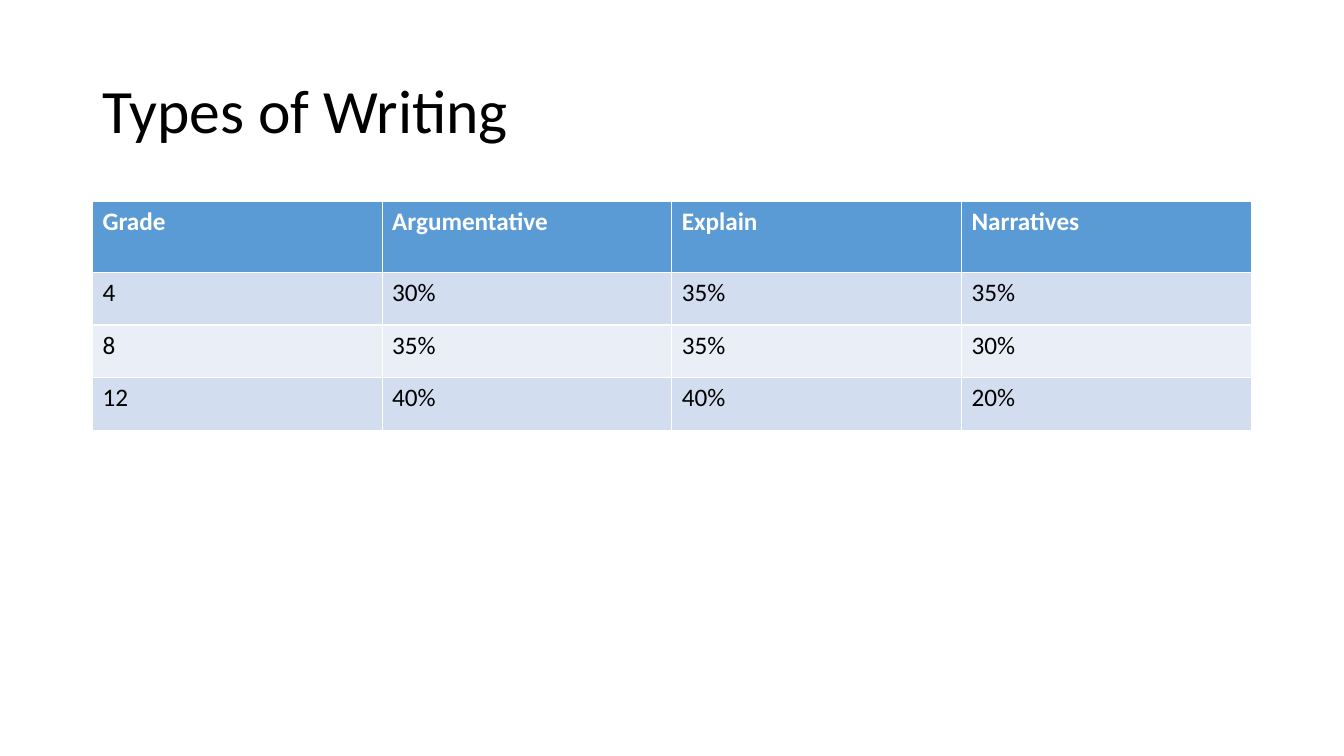
import pptx
import pptx.util
import pptx.dml.color
import pptx.enum.text

Cm = pptx.util.Cm
Pt = pptx.util.Pt
RGBColor = pptx.dml.color.RGBColor

# Content
HEADING = "Types of Writing"
GRADE_SHARES = [
    ("Grade", "Argumentative", "Explain", "Narratives"),
    ("4", "30%", "35%", "35%"),
    ("8", "35%", "35%", "30%"),
    ("12", "40%", "40%", "20%"),
]

# Look
FONT = "Calibri"
BLACK = RGBColor(0x00, 0x00, 0x00)
WHITE = RGBColor(0xFF, 0xFF, 0xFF)
HEADER_BLUE = RGBColor(0x5B, 0x9B, 0xD5)
BANDS = [RGBColor(0xEA, 0xEF, 0xF7), RGBColor(0xD2, 0xDE, 0xEF)]

# Layout
LEFT, WIDTH = Cm(2.33), Cm(29.2)
TABLE_TOP = Cm(5.08)
HEADER_HEIGHT, ROW_HEIGHT = Cm(1.78), Cm(1.33)


def style_text(paragraph, size, color, bold=False):
    for run in paragraph.runs:
        run.font.name = FONT
        run.font.size = Pt(size)
        run.font.bold = bold
        run.font.color.rgb = color


def add_heading(slide):
    heading = slide.shapes.title
    heading.left, heading.top = LEFT, Cm(1.01)
    heading.width, heading.height = WIDTH, Cm(3.68)
    frame = heading.text_frame
    frame.text = HEADING
    frame.auto_size = pptx.enum.text.MSO_AUTO_SIZE.NONE
    frame.vertical_anchor = pptx.enum.text.MSO_ANCHOR.MIDDLE
    line = frame.paragraphs[0]
    line.alignment = pptx.enum.text.PP_ALIGN.LEFT
    line.line_spacing = 0.9
    style_text(line, 44, BLACK)


def add_grade_table(slide):
    heights = [HEADER_HEIGHT] + [ROW_HEIGHT] * (len(GRADE_SHARES) - 1)
    # The default table style supplies the white cell borders
    grades = slide.shapes.add_table(
        len(GRADE_SHARES), len(GRADE_SHARES[0]),
        LEFT, TABLE_TOP, WIDTH, sum(heights)).table
    for r, (shares, height) in enumerate(zip(GRADE_SHARES, heights)):
        grades.rows[r].height = height
        is_header = r == 0
        for c, share in enumerate(shares):
            cell = grades.cell(r, c)
            cell.text_frame.text = share
            cell.fill.solid()
            cell.fill.fore_color.rgb = HEADER_BLUE if is_header else BANDS[r % 2]
            style_text(cell.text_frame.paragraphs[0], 18,
                       WHITE if is_header else BLACK, is_header)


def main():
    deck = pptx.Presentation()
    deck.slide_width, deck.slide_height = Cm(33.87), Cm(19.05)
    slide = deck.slides.add_slide(deck.slide_layouts[5])
    add_heading(slide)
    add_grade_table(slide)
    deck.save("out.pptx")


if __name__ == "__main__":
    main()
